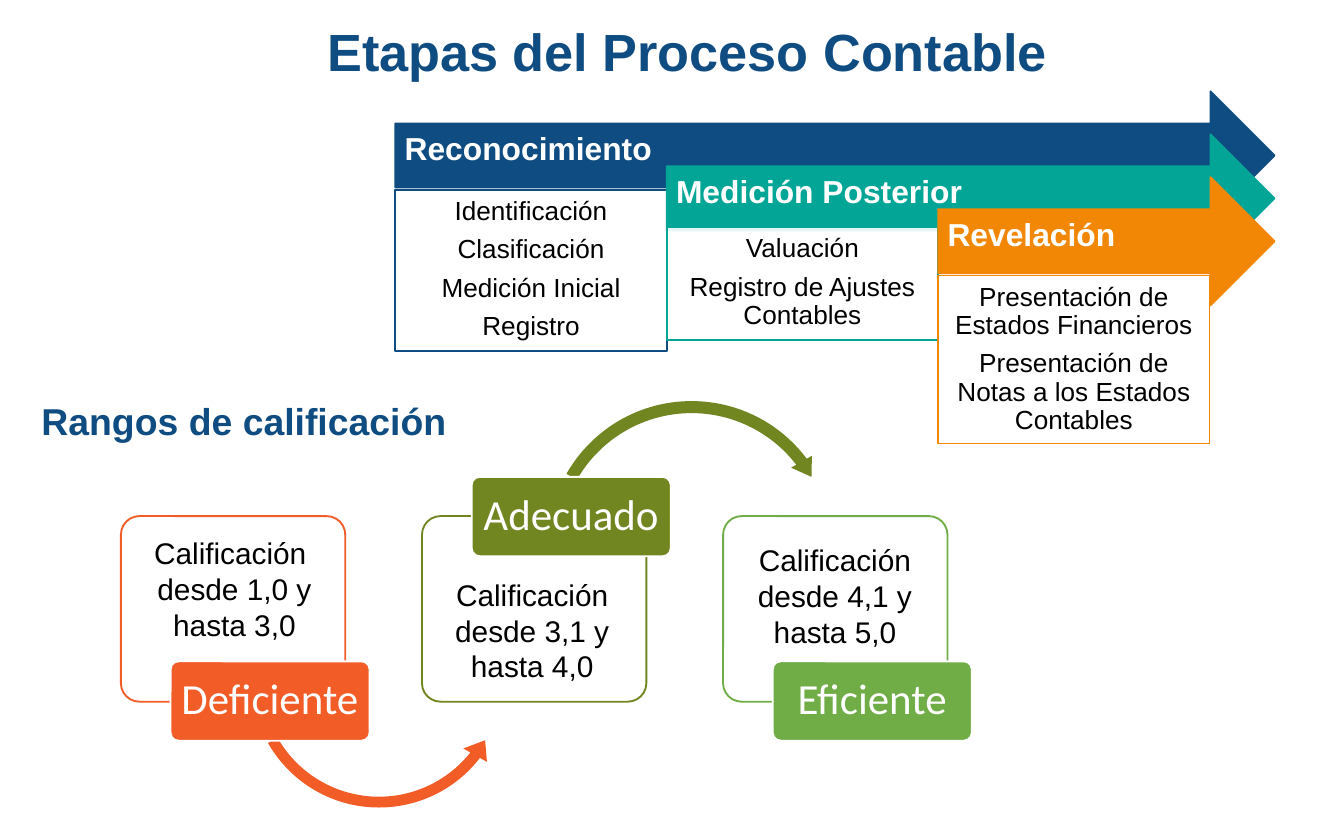
from dataclasses import dataclass

from pptx import Presentation
from pptx.dml.color import RGBColor
from pptx.enum.shapes import MSO_SHAPE as Preset
from pptx.enum.text import MSO_ANCHOR as Anchor, MSO_AUTO_SIZE as AutoSize, PP_ALIGN as Align
from pptx.oxml.ns import qn
from pptx.util import Pt
from lxml.etree import SubElement


@dataclass(frozen=True)
class Theme:
    navy: str = "0F4C81"
    teal: str = "03A696"
    amber: str = "F28705"
    coral: str = "F25D27"
    olive: str = "718521"
    green: str = "70AD47"
    white: str = "FFFFFF"
    black: str = "000000"
    body_font: str = "Arial"
    tag_font: str = "Calibri"
    title_size: int = 28
    subtitle_size: int = 20
    stage_size: int = 17
    step_size: int = 14
    tag_size: int = 23
    range_size: int = 16
    outline: int = 1
    card_alpha: int = 90


THEME = Theme()


def add_preset(slide, preset, box, fill, line=None, adjustments=(), alpha=None):
    shape = slide.shapes.add_shape(preset, *map(Pt, box))
    shape.shadow.inherit = False
    for index, value in enumerate(adjustments):
        shape.adjustments[index] = value
    shape.fill.solid()
    shape.fill.fore_color.rgb = RGBColor.from_string(fill)
    if alpha is not None:
        color = shape.fill._xPr.find(qn("a:solidFill"))[0]
        SubElement(color, qn("a:alpha")).set("val", str(alpha * 1000))
    if line:
        shape.line.color.rgb = RGBColor.from_string(line)
        shape.line.width = Pt(THEME.outline)
    else:
        shape.line.fill.background()
    return shape


def write(shape, lines, size, color, align=Align.CENTER, anchor=Anchor.MIDDLE, bold=False,
          font=THEME.body_font, insets=(7.2, 3.6, 7.2, 3.6), leading=0.9, gap=0):
    frame = shape.text_frame
    frame.word_wrap = True
    frame.vertical_anchor = anchor
    (frame.margin_left, frame.margin_top,
     frame.margin_right, frame.margin_bottom) = map(Pt, insets)
    for index, line in enumerate(lines):
        paragraph = frame.paragraphs[0] if index == 0 else frame.add_paragraph()
        paragraph.alignment = align
        paragraph.line_spacing = leading
        paragraph.space_after = Pt(gap)
        run = paragraph.add_run()
        run.text = line
        run.font.name = font
        run.font.size = Pt(size)
        run.font.bold = bold
        run.font.color.rgb = RGBColor.from_string(color)


def add_heading(slide, box, text, size, align):
    heading = slide.shapes.add_textbox(*map(Pt, box))
    write(heading, [text], size, THEME.navy, align, bold=True)


def add_stages(slide, box):
    """Overlapping arrows that share one right end, each with its card of steps."""
    left, top, width, _ = box
    card_width, drop, arrow_height = 145.4, 23, 68.6
    # name, colour, card offset from the top, card height, steps
    stages = [
        ("Reconocimiento", THEME.navy, 52.6, 86.4,
         ["Identificación", "Clasificación", "Medición Inicial", "Registro"]),
        ("Medición Posterior", THEME.teal, 72.8, 60.5,
         ["Valuación", "Registro de Ajustes Contables"]),
        ("Revelación", THEME.amber, 98.6, 90,
         ["Presentación de Estados Financieros",
          "Presentación de Notas a los Estados Contables"]),
    ]
    for index, (name, color, card_top, card_height, steps) in enumerate(stages):
        shift = index * card_width
        arrow = add_preset(slide, Preset.RIGHT_ARROW,
                           (left + shift, top + index * drop, width - shift, arrow_height),
                           color, color, (0.5, 0.5))
        write(arrow, [name], THEME.stage_size, THEME.white, Align.LEFT, bold=True,
              insets=(5, 5, 20, 10.8))
        card = add_preset(slide, Preset.RECTANGLE,
                          (left + shift, top + card_top, card_width, card_height),
                          THEME.white, color, alpha=THEME.card_alpha)
        write(card, steps, THEME.step_size, THEME.black, anchor=Anchor.TOP,
              insets=(4.3,) * 4, gap=5.5)


def add_ranges(slide, box):
    """Row of score cards, with tags alternately below and above, joined by curved arrows."""
    left, top, width, height = box
    card_width, tag_width, tag_height = 120.2, 106.6, 42.5
    tag_shift, tag_low, tag_high = 26.6, 77.8, -21
    pitch = (width - tag_shift - tag_width) / 2
    # name, colour, tag offset, text box (x, y, width), limits, curved arrow (preset, x, y, side, adj)
    ranges = [
        ("Deficiente", THEME.coral, tag_low, (-2.2, 6.5, 126), ("1,0", "3,0"),
         (Preset.LEFT_CIRCULAR_ARROW, 65.5, 15.1, 145.4, (0.04, 5.05, 22.8, 90.25, 0.05))),
        ("Adecuado", THEME.olive, tag_high, (10, 28.8, 98), ("3,1", "4,0"),
         (Preset.CIRCULAR_ARROW, 64.1, -64.8, 160.6, (0.04, 4.52, 193.72, 125.76, 0.04))),
        ("Eficiente", THEME.green, tag_low, (10.9, 10.1, 98), ("4,1", "5,0"), None),
    ]
    for index, (name, color, tag_top, text_box, (low, high), curve) in enumerate(ranges):
        x = left + index * pitch
        add_preset(slide, Preset.ROUNDED_RECTANGLE, (x, top, card_width, height),
                   THEME.white, color, (0.1,), THEME.card_alpha)
        if curve:
            preset, dx, dy, side, adjustments = curve
            add_preset(slide, preset, (x + dx, top + dy, side, side), color,
                       adjustments=adjustments)
        tag = add_preset(slide, Preset.ROUNDED_RECTANGLE,
                         (x + tag_shift, top + tag_top, tag_width, tag_height),
                         color, THEME.white, (0.1,))
        write(tag, [name], THEME.tag_size, THEME.white, font=THEME.tag_font,
              insets=(3.6, 2.2, 3.6, 2.2))
        dx, dy, text_width = text_box
        limits = slide.shapes.add_textbox(Pt(x + dx), Pt(top + dy), Pt(text_width), Pt(65.5))
        write(limits, ["Calificación ", f"desde {low} y hasta {high}"], THEME.range_size,
              THEME.black, anchor=Anchor.TOP, leading=1.0)
        limits.text_frame.auto_size = AutoSize.SHAPE_TO_FIT_TEXT


def main():
    deck = Presentation()
    deck.slide_width, deck.slide_height = Pt(720), Pt(450)
    slide = deck.slides.add_slide(deck.slide_layouts[6])

    # Headings
    add_heading(slide, (64, 0, 608, 58.3), "Etapas del Proceso Contable",
                THEME.title_size, Align.CENTER)
    add_heading(slide, (15.1, 205.2, 241.2, 43.2), "Rangos de calificación",
                THEME.subtitle_size, Align.LEFT)
    # Stages of the accounting process
    add_stages(slide, (211.8, 49, 471, 242))
    # Score ranges
    add_ranges(slide, (64.8, 276.5, 455.8, 99.4))

    deck.save("out.pptx")


if __name__ == "__main__":
    main()
